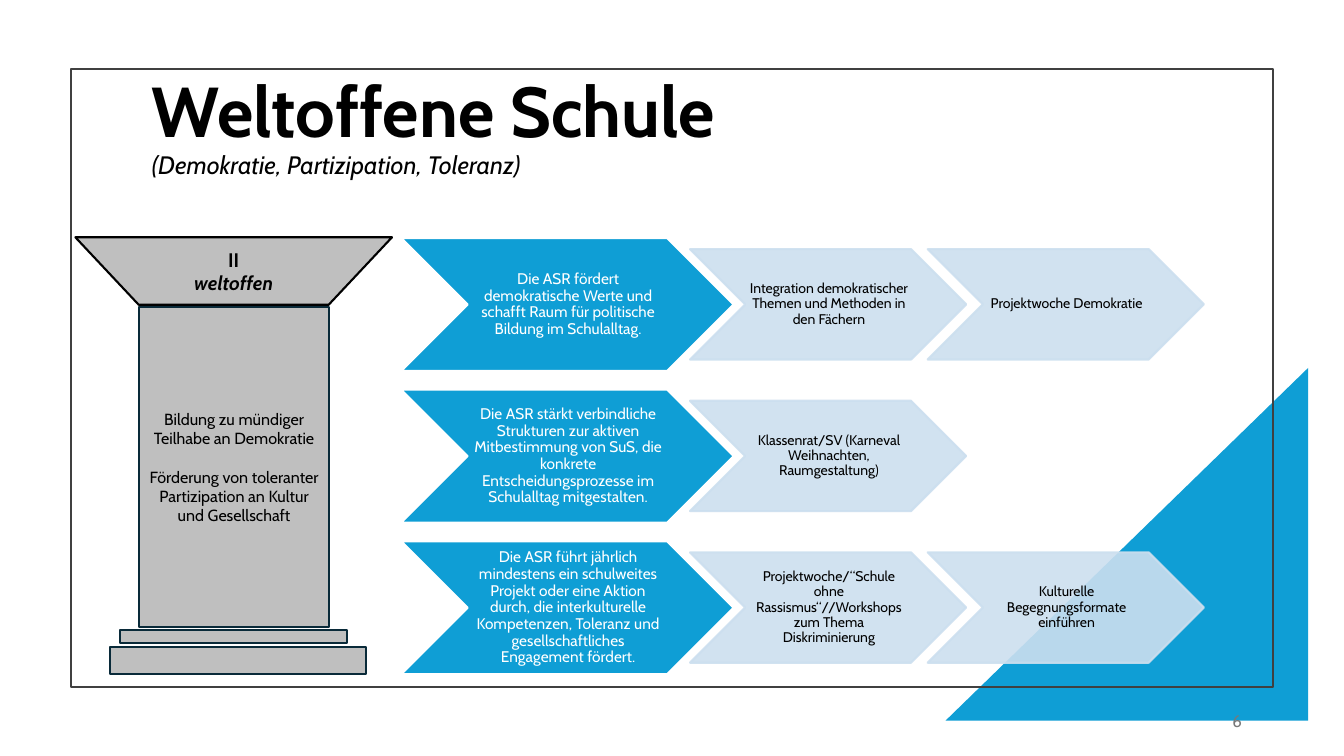
import pptx
import pptx.dml.color
import pptx.enum.shapes
import pptx.enum.text
import pptx.oxml.ns
import pptx.util
from lxml import etree

Cm = pptx.util.Cm
Pt = pptx.util.Pt
SHAPE = pptx.enum.shapes.MSO_SHAPE
ALIGN = pptx.enum.text.PP_ALIGN
FONT = "Cabin"
COLORS = {
    "blue": "0F9ED5",
    "pale": "CCDFEF",
    "stone": "BFBFBF",
    "navy": "092A39",
    "frame": "404040",
    "number": "797979",
    "black": "000000",
    "white": "FFFFFF",
}

GOALS = [
    ("Die ASR fördert demokratische Werte und schafft Raum für politische "
     "Bildung im Schulalltag.",
     ["Integration demokratischer Themen und Methoden in den Fächern",
      "Projektwoche Demokratie"]),
    ("Die ASR stärkt verbindliche Strukturen zur aktiven Mitbestimmung von SuS, "
     "die konkrete Entscheidungsprozesse im Schulalltag mitgestalten.",
     ["Klassenrat/SV (Karneval Weihnachten, Raumgestaltung)"]),
    ("Die ASR führt jährlich mindestens ein schulweites Projekt oder eine Aktion "
     "durch, die interkulturelle Kompetenzen, Toleranz und gesellschaftliches "
     "Engagement fördert.",
     ["Projektwoche/“Schule ohne Rassismus“//Workshops zum Thema Diskriminierung",
      "Kulturelle Begegnungsformate einführen"]),
]


class SlideBuilder:
    def __init__(self, slide):
        self.slide = slide

    def color(self, name):
        return pptx.dml.color.RGBColor.from_string(COLORS[name])

    def shape(self, kind, box, fill=None, line=None, opacity=100):
        """Add a preset shape; box is left, top, width, height in cm."""
        shape = self.slide.shapes.add_shape(kind, *map(Cm, box))
        shape.shadow.inherit = False
        if fill:
            shape.fill.solid()
            shape.fill.fore_color.rgb = self.color(fill)
        else:
            shape.fill.background()
        if line:
            shape.line.color.rgb = self.color(line)
            shape.line.width = Pt(1.5)
        else:
            shape.line.fill.background()
        if opacity < 100:
            for color in shape.element.spPr.iter(pptx.oxml.ns.qn("a:srgbClr")):
                alpha = etree.SubElement(color, pptx.oxml.ns.qn("a:alpha"))
                alpha.set("val", str(opacity * 1000))
        return shape

    def label(self, shape, text, size, color="black", align=ALIGN.CENTER, spacing=1.0):
        """Set the text of a shape, vertically centred, and return its paragraphs."""
        frame = shape.text_frame
        frame.word_wrap = True
        frame.vertical_anchor = pptx.enum.text.MSO_ANCHOR.MIDDLE
        frame.text = text
        for paragraph in frame.paragraphs:
            paragraph.alignment = align
            paragraph.line_spacing = spacing
            for run in paragraph.runs:
                run.font.name = FONT
                run.font.size = Pt(size)
                run.font.color.rgb = self.color(color)
        return frame.paragraphs

    def textbox(self, box, text, size, **style):
        return self.label(self.slide.shapes.add_textbox(*map(Cm, box)), text, size, **style)

    def chevron(self, box, text, size, color, fill, line, opacity=100):
        shape = self.shape(SHAPE.CHEVRON, box, fill, line, opacity)
        self.label(shape, text, size, color, spacing=0.9)
        frame = shape.text_frame
        frame.margin_left, frame.margin_right = Cm(0.04), 0
        frame.margin_top = frame.margin_bottom = Cm(0.02)

    def background(self):
        triangle = self.shape(SHAPE.RIGHT_TRIANGLE, (23.83, 9.27, 9.14, 8.89), "blue")
        triangle.element.spPr.xfrm.set("flipH", "1")
        self.shape(SHAPE.RECTANGLE, (1.78, 1.74, 30.3, 15.57), line="frame")

    def title(self, heading, subtitle):
        paragraph = self.textbox((3.58, 2.21, 22.43, 2.06), f"{heading}\v{subtitle}",
                                 50.4, align=ALIGN.LEFT, spacing=0.9)[0]
        heading_run, subtitle_run = paragraph.runs
        heading_run.font.bold = True
        subtitle_run.font.size = Pt(18)
        subtitle_run.font.italic = True

    def goals(self):
        """One row per goal: a large chevron followed by its measures."""
        for row, (goal, measures) in enumerate(GOALS):
            top = 6 + row * 3.82
            self.chevron((10.11, top, 8.38, 3.35), goal, 11, "white", "blue", "white")
            for column, measure in enumerate(measures):
                self.chevron((17.39 + column * 5.99, top + 0.28, 6.96, 2.78),
                             measure, 10, "black", "pale", "pale", opacity=90)

    def pillar(self):
        self.shape(SHAPE.RECTANGLE, (3.02, 15.88, 5.72, 0.33), "stone", "navy")
        shaft = self.shape(SHAPE.RECTANGLE, (3.51, 7.73, 4.78, 8.08), "stone", "navy")
        paragraphs = self.label(
            shaft, "Bildung zu mündiger Teilhabe an Demokratie\n"
            "Förderung von toleranter Partizipation an Kultur und Gesellschaft", 11.5)
        paragraphs[1].space_before = Pt(14)
        capital = self.shape(SHAPE.FLOWCHART_MANUAL_OPERATION,
                             (1.9, 5.98, 7.98, 1.7), "stone", "black")
        paragraphs = self.label(capital, "II\nweltoffen", 14)
        for paragraph in paragraphs:
            paragraph.runs[0].font.bold = True
        paragraphs[1].runs[0].font.italic = True
        self.shape(SHAPE.RECTANGLE, (2.78, 16.31, 6.44, 0.67), "stone", "navy")


def main():
    presentation = pptx.Presentation()
    presentation.slide_width = Cm(33.87)
    presentation.slide_height = Cm(19.05)
    builder = SlideBuilder(presentation.slides.add_slide(presentation.slide_layouts[6]))
    builder.background()
    builder.title("Weltoffene Schule", "(Demokratie, Partizipation, Toleranz)")
    builder.goals()
    builder.pillar()
    builder.textbox((23.93, 17.65, 7.62, 1.02), "6", 12, color="number", align=ALIGN.RIGHT)
    presentation.save("out.pptx")


if __name__ == "__main__":
    main()
